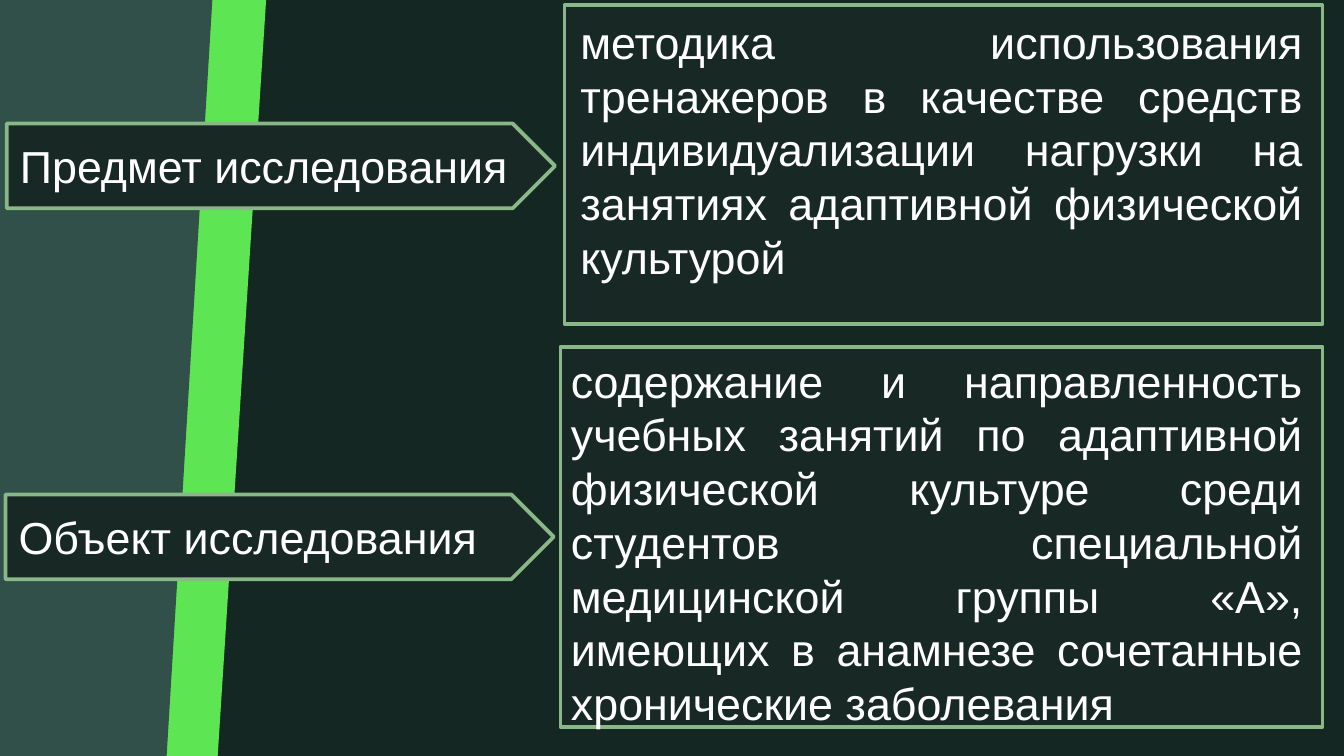
from pptx import Presentation
from pptx.dml.color import RGBColor
from pptx.enum.shapes import MSO_SHAPE
from pptx.enum.text import MSO_ANCHOR, MSO_AUTO_SIZE, PP_ALIGN
from pptx.util import Inches, Pt

COLORS = {
    "background": "142723",
    "stripe": "5EE553",
    "side": "305049",
    "panel": "182825",
    "border": "8AB787",
    "text": "FFFFFF",
}
WIDTH = 10
HEIGHT = WIDTH * 9 / 16

# colour, right edge at the top, right edge at the bottom
SLANTED_BANDS = [("stripe", 1.98, 1.62), ("side", 1.58, 1.24)]

# boxes are left, top, width, height
TOPICS = [
    {
        "label": "Предмет исследования",
        "label_box": (0.05, 0.92, 4.08, 0.63),
        "frame_box": (4.2, 0.04, 5.64, 2.37),
        "description": "методика использования тренажеров в качестве средств "
                       "индивидуализации нагрузки на занятиях адаптивной "
                       "физической культурой",
        "description_box": (4.22, 0.06, 5.57, 2.12),
    },
    {
        "label": "Объект исследования",
        "label_box": (0.04, 3.68, 4.08, 0.63),
        "frame_box": (4.17, 2.58, 5.67, 2.83),
        "description": "содержание и направленность учебных занятий по "
                       "адаптивной физической культуре среди студентов "
                       "специальной медицинской группы «А», имеющих в анамнезе "
                       "сочетанные хронические заболевания",
        "description_box": (4.15, 2.58, 5.64, 2.93),
    },
]


def color(name):
    return RGBColor.from_string(COLORS[name])


def add_band(slide, fill, top_right, bottom_right):
    outline = slide.shapes.build_freeform(Inches(top_right), 0)
    corners = [(bottom_right, HEIGHT), (0, HEIGHT), (0, 0)]
    outline.add_line_segments([(Inches(x), Inches(y)) for x, y in corners])
    band = outline.convert_to_shape()
    band.shadow.inherit = False
    band.fill.solid()
    band.fill.fore_color.rgb = color(fill)
    band.line.fill.background()


def add_panel(slide, preset, box):
    panel = slide.shapes.add_shape(preset, *map(Inches, box))
    panel.shadow.inherit = False
    panel.fill.solid()
    panel.fill.fore_color.rgb = color("panel")
    panel.line.color.rgb = color("border")
    panel.line.width = Pt(2)
    return panel


def write(frame, text, align):
    frame.word_wrap = True
    paragraph = frame.paragraphs[0]
    paragraph.alignment = align
    run = paragraph.add_run()
    run.text = text
    run.font.name = "Arial"
    run.font.size = Pt(24)
    run.font.color.rgb = color("text")


prs = Presentation()
prs.slide_width, prs.slide_height = Inches(WIDTH), Inches(HEIGHT)
slide = prs.slides.add_slide(prs.slide_layouts[6])
slide.background.fill.solid()
slide.background.fill.fore_color.rgb = color("background")

for band in SLANTED_BANDS:
    add_band(slide, *band)

for topic in TOPICS:
    label = add_panel(slide, MSO_SHAPE.PENTAGON, topic["label_box"])
    label.text_frame.vertical_anchor = MSO_ANCHOR.MIDDLE
    write(label.text_frame, topic["label"], PP_ALIGN.LEFT)

for topic in TOPICS:
    add_panel(slide, MSO_SHAPE.RECTANGLE, topic["frame_box"])

for topic in TOPICS:
    description = slide.shapes.add_textbox(*map(Inches, topic["description_box"]))
    write(description.text_frame, topic["description"], PP_ALIGN.JUSTIFY)
    description.text_frame.auto_size = MSO_AUTO_SIZE.SHAPE_TO_FIT_TEXT

prs.save("out.pptx")
